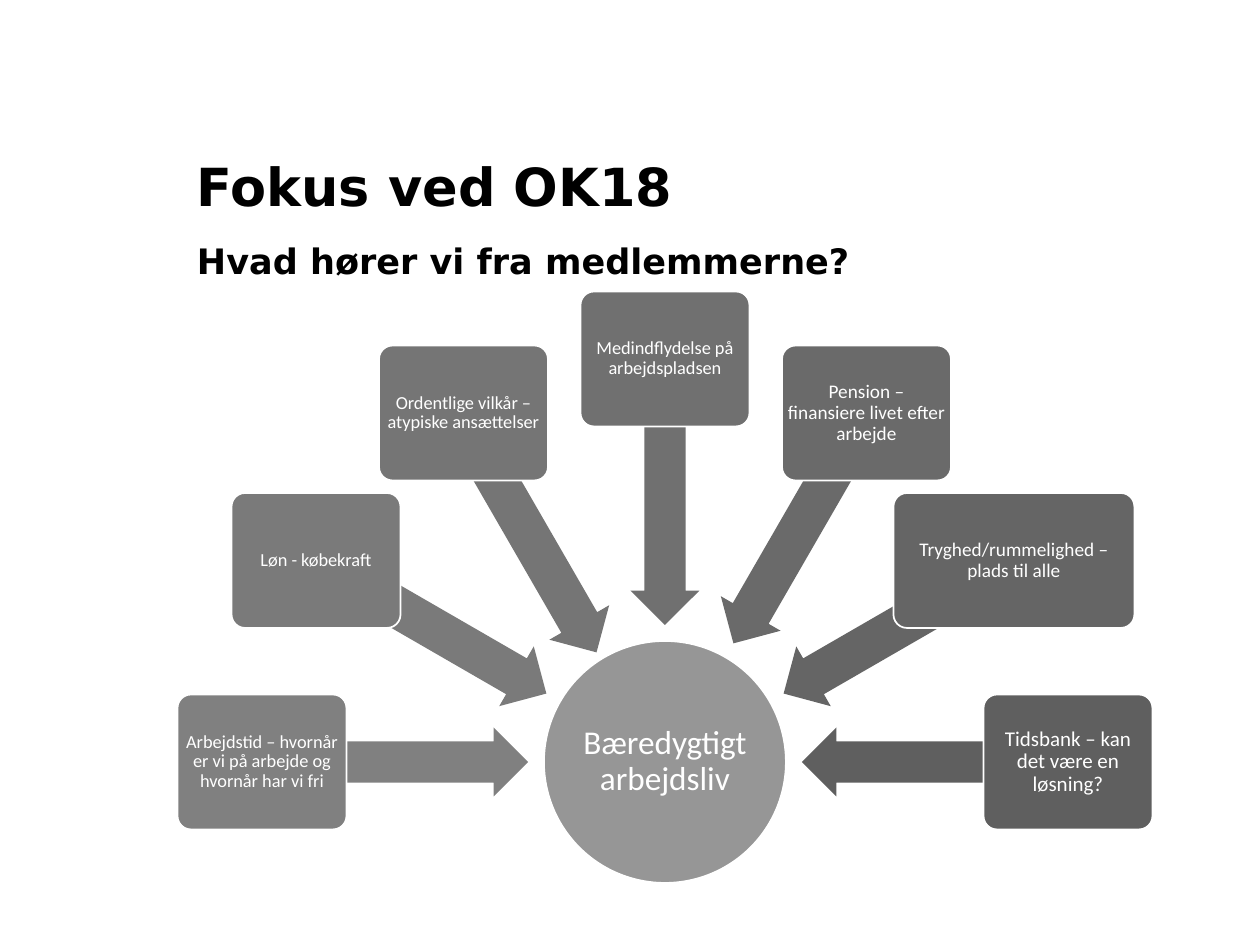
import math

from pptx import Presentation
from pptx import util as u
from pptx.dml.color import RGBColor
from pptx.enum import shapes, text

PX_PER_INCH = 126
BLACK = RGBColor(0x00, 0x00, 0x00)
WHITE = RGBColor(0xFF, 0xFF, 0xFF)
HUB_GRAY = RGBColor(0x96, 0x96, 0x96)
GRAYS = [RGBColor(level, level, level)
         for level in (0x80, 0x7A, 0x75, 0x70, 0x6A, 0x65, 0x5F)]

HUB_X, HUB_Y, HUB_SIZE = 665, 762, 242
ARROW_RADIUS, ARROW_LENGTH, ARROW_HEIGHT = 270, 266, 69
BOX_RADIUS, BOX_WIDTH, WIDE_BOX_WIDTH, BOX_HEIGHT = 403, 169, 241, 135
STEP_DEGREES = 30

TOPICS = [
    ("Arbejdstid – hvornår er vi på arbejde og hvornår har vi fri", 10.5, BOX_WIDTH, 0),
    ("Løn - købekraft", 10.5, BOX_WIDTH, 0),
    ("Ordentlige vilkår – atypiske ansættelser", 10.5, BOX_WIDTH, 9),
    ("Medindflydelse på arbejdspladsen", 10.5, BOX_WIDTH, 0),
    ("Pension – finansiere livet efter arbejde", 11, BOX_WIDTH, 0),
    ("Tryghed/rummelighed – plads til alle", 11, WIDE_BOX_WIDTH, 0),
    ("Tidsbank – kan det være en løsning?", 12, BOX_WIDTH, 0),
]


def px(length):
    return u.Emu(round(length * u.Inches(1) / PX_PER_INCH))


def apply_format(target, values):
    for name, value in values.items():
        setattr(target, name, value)


class SlideBuilder:
    heading_font = {"name": "DejaVu Sans", "bold": True}
    label_font = {"name": "Calibri", "bold": False}

    def __init__(self, presentation):
        self.slide = presentation.slides.add_slide(presentation.slide_layouts[5])
        self.diagram = self.slide.shapes.add_group_shape().shapes

    def set_text(self, shape, words, size, color, font, alignment, anchor, inset):
        frame = shape.text_frame
        margins = {f"margin_{side}": px(inset)
                   for side in ("left", "top", "right", "bottom")}
        apply_format(frame, {"word_wrap": True, "auto_size": text.MSO_AUTO_SIZE.NONE,
                             "vertical_anchor": anchor, **margins})
        paragraph = frame.paragraphs[0]
        paragraph.text = words
        apply_format(paragraph, {"alignment": alignment, "line_spacing": 0.9})
        apply_format(paragraph.font, {"size": u.Pt(size), **font})
        paragraph.font.color.rgb = color

    def heading(self, shape, words, size):
        self.set_text(shape, words, size, BLACK, self.heading_font,
                      text.PP_ALIGN.LEFT, text.MSO_ANCHOR.TOP, 0)

    def title(self, words, left, top, width, height, size):
        shape = self.slide.shapes.title
        apply_format(shape, {"left": px(left), "top": px(top),
                             "width": px(width), "height": px(height)})
        self.heading(shape, words, size)

    def subtitle(self, words, left, top, width, height, size):
        shape = self.slide.shapes.add_textbox(px(left), px(top), px(width), px(height))
        self.heading(shape, words, size)

    def centered_shape(self, kind, x, y, width, height, fill, adjustments=()):
        shape = self.diagram.add_shape(
            kind, px(x - width / 2), px(y - height / 2), px(width), px(height))
        shape.shadow.inherit = False
        shape.fill.solid()
        shape.fill.fore_color.rgb = fill
        for index, value in enumerate(adjustments):
            shape.adjustments[index] = value
        return shape

    def label(self, shape, words, size, inset):
        shape.line.color.rgb = WHITE
        shape.line.width = u.Pt(1)
        self.set_text(shape, words, size, WHITE, self.label_font,
                      text.PP_ALIGN.CENTER, text.MSO_ANCHOR.MIDDLE, inset)

    def hub(self, words, size):
        shape = self.centered_shape(shapes.MSO_SHAPE.OVAL, HUB_X, HUB_Y,
                                    HUB_SIZE, HUB_SIZE, HUB_GRAY)
        self.label(shape, words, size, 1)

    def arrow(self, x, y, rotation, fill):
        shape = self.centered_shape(shapes.MSO_SHAPE.LEFT_ARROW, x, y,
                                    ARROW_LENGTH, ARROW_HEIGHT, fill, (0.6, 0.5))
        shape.line.fill.background()
        shape.rotation = rotation

    def box(self, words, x, y, width, size, fill):
        shape = self.centered_shape(shapes.MSO_SHAPE.ROUNDED_RECTANGLE, x, y,
                                    width, BOX_HEIGHT, fill, (0.1,))
        self.label(shape, words, size, 2)


def around_hub(radius, degrees):
    angle = math.radians(degrees)
    return HUB_X - radius * math.cos(angle), HUB_Y - radius * math.sin(angle)


def main():
    presentation = Presentation()
    apply_format(presentation, {"slide_width": px(1260), "slide_height": px(945)})
    builder = SlideBuilder(presentation)
    builder.title("Fokus ved OK18", 197, 161, 976, 54, 30)
    builder.subtitle("Hvad hører vi fra medlemmerne?", 197, 244, 976, 48, 20)
    builder.hub("Bæredygtigt arbejdsliv", 19)
    for index, (words, size, width, arrow_drop) in enumerate(TOPICS):
        degrees = index * STEP_DEGREES
        arrow_x, arrow_y = around_hub(ARROW_RADIUS, degrees)
        builder.arrow(arrow_x, arrow_y + arrow_drop, (180 + degrees) % 360, GRAYS[index])
        builder.box(words, *around_hub(BOX_RADIUS, degrees), width, size, GRAYS[index])
    presentation.save("out.pptx")


if __name__ == "__main__":
    main()
